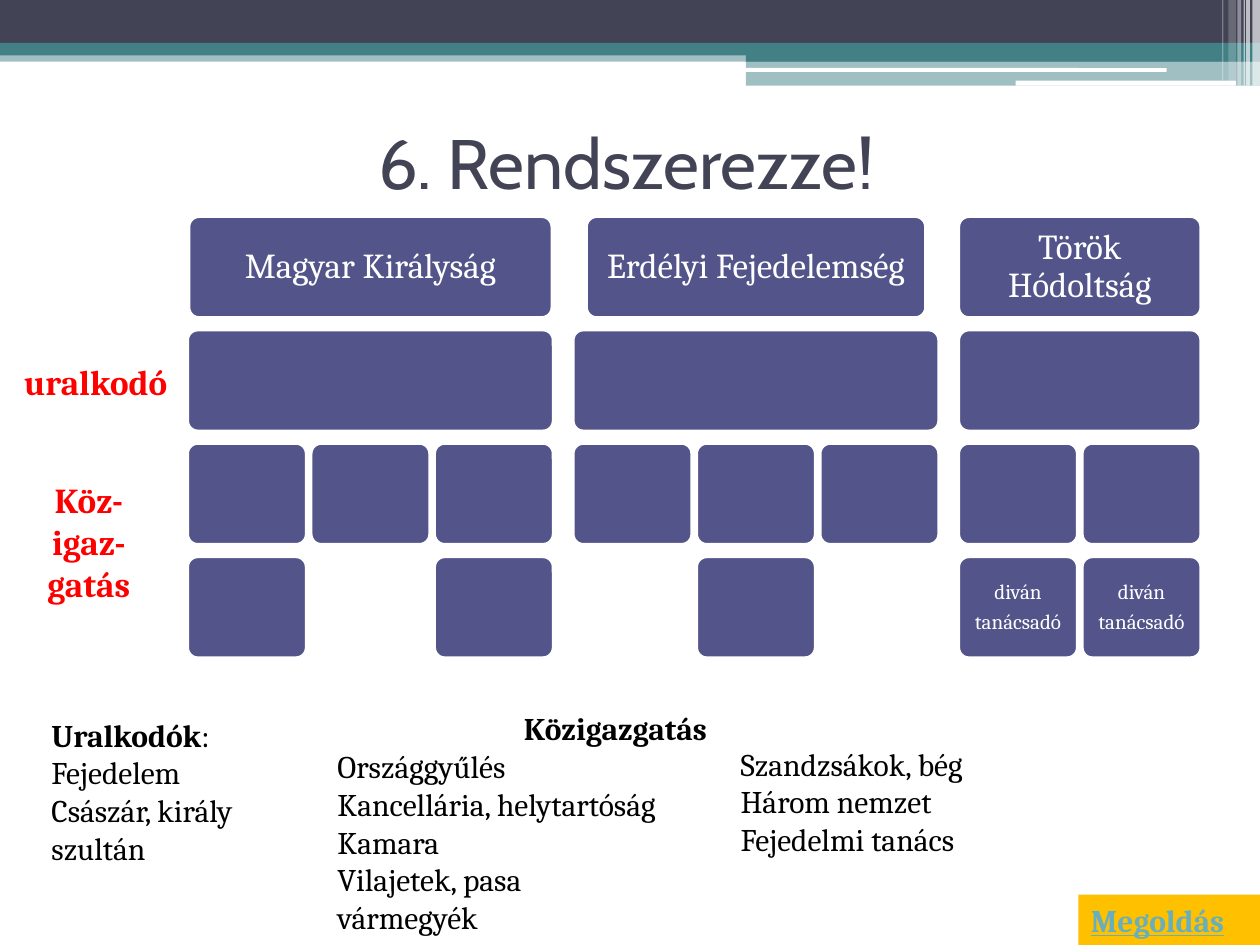
from lxml import etree
from pptx import Presentation
from pptx.dml.color import RGBColor
from pptx.oxml.ns import qn
from pptx.util import Inches, Pt
from pptx.enum import shapes, text

INK = {"navy": "424456", "teal": "438086", "white": "FFFFFF", "box": "53548A",
       "gold": "FFC000", "link": "67AFBD", "red": "FF0000", "black": "000000"}
RECT, ROUND = shapes.MSO_SHAPE.RECTANGLE, shapes.MSO_SHAPE.ROUNDED_RECTANGLE
MID, TOP = text.MSO_ANCHOR.MIDDLE, text.MSO_ANCHOR.TOP
LEFT, MITTE, RIGHT = text.PP_ALIGN.LEFT, text.PP_ALIGN.CENTER, text.PP_ALIGN.RIGHT

deck = Presentation()
deck.slide_width, deck.slide_height = Inches(10), Inches(7.5)
slide = deck.slides.add_slide(deck.slide_layouts[6])


def block(kind, area, ink, alpha=100, edge=None):
    """Add a filled shape, optionally see-through or with an edge."""
    shape = slide.shapes.add_shape(kind, *map(Inches, area))
    shape.shadow.inherit = False
    shape.fill.solid()
    shape.fill.fore_color.rgb = RGBColor.from_string(INK[ink])
    if alpha < 100:
        tone = shape.fill._xPr.find(qn("a:solidFill"))[0]
        etree.SubElement(tone, qn("a:alpha"), val=str(alpha * 1000))
    if edge:
        shape.line.color.rgb = RGBColor.from_string(INK[edge])
        shape.line.width = Pt(1.5)
    else:
        shape.line.fill.background()
    return shape


def write(shape, lines, size, ink, align=LEFT, anchor=TOP, inset=0.1, space=None,
          **font):
    """Fill a shape with one paragraph per line."""
    frame = shape.text_frame
    frame.word_wrap, frame.vertical_anchor = True, anchor
    frame.margin_left = frame.margin_right = Inches(inset)
    frame.margin_top = frame.margin_bottom = Inches(inset / 2)
    look = {"name": "Cambria", "size": Pt(size), **font}
    for i, line in enumerate(lines):
        para = frame.paragraphs[0] if i == 0 else frame.add_paragraph()
        para.alignment = align
        if space:
            para.line_spacing, para.space_after = space, Pt(size * 0.35)
        run = para.add_run()
        run.text = line
        run.font.color.rgb = RGBColor.from_string(INK[ink])
        for key, value in look.items():
            setattr(run.font, key, value)
    return frame


# Header bands
for area, ink, alpha in [
        ((0, 0.4, 10, 0.09), "teal", 50), ((0, 0, 10, 0.34), "navy", 100),
        ((0, 0.34, 10, 0.1), "teal", 100), ((5.92, 0.39, 4.08, 0.1), "teal", 100),
        ((5.92, 0.48, 4.08, 0.2), "teal", 50)]:
    block(RECT, area, ink, alpha)
for area in [(5.91, 0.54, 3.35, 0.03), (8.06, 0.64, 1.75, 0.04)]:
    block(ROUND, area, "white")

# Pale stripes at the right end
for left, wide, tall, alpha in [
        (9.94, 0.06, 0.68, 65), (9.89, 0.03, 0.68, 65), (9.87, 0.01, 0.68, 60),
        (9.82, 0.03, 0.68, 40), (9.75, 0.06, 0.64, 20), (9.7, 0.01, 0.64, 30)]:
    block(RECT, (left, 0, wide, tall), "white", alpha)

# Title
title = slide.shapes.add_textbox(*map(Inches, (0.47, 0.7, 9, 1.17)))
write(title, ["6. Rendszerezze!"], 40, "navy", MITTE, MID, name="Cabin")

# Answer button
button = block(RECT, (8.56, 7.1, 1.44, 0.4), "gold")
write(button, ["Megoldás"], 18, "link", bold=True, underline=True)

# Chart of boxes: three groups of columns, four rows
X, Y, COL, ROW, GAP = 1.49, 1.72, 0.98, 0.9, 0.04
WIDE, TALL, GROUP = COL - GAP, 0.8, 3.06
groups = [  # heading, its width, columns, columns filled in the last row
    ("Magyar Királyság", 2.88, 3, {0: [], 2: []}),
    ("Erdélyi Fejedelemség", 2.69, 3, {1: []}),
    ("Török Hódoltság", 1.92, 2, dict.fromkeys((0, 1), ["diván", "tanácsadó"]))]
for g, (head, width, cols, last) in enumerate(groups):
    left, span = X + g * GROUP, cols * COL - GAP
    cells = [(left + (span - width) / 2, 0, width, [head], 20),
             (left, 1, span, [], 20)]
    cells += [(left + c * COL, 2, WIDE, [], 12) for c in range(cols)]
    cells += [(left + c * COL, 3, WIDE, lines, 12) for c, lines in last.items()]
    for x, row, wide, lines, size in cells:
        cell = block(ROUND, (x, Y + row * ROW, wide, TALL), "box", edge="white")
        cell.adjustments[0] = 0.1
        write(cell, lines, size, "white", MITTE, MID, size / 200, 0.9)

# Row labels
for area, lines in [((0, 2.81, 1.52, 0.44), ["uralkodó"]),
                    ((0.16, 3.75, 1.09, 1.11), ["Köz-", "igaz-", "gatás"])]:
    label = slide.shapes.add_textbox(*map(Inches, area))
    write(label, lines, 20, "red", MITTE, bold=True)

# Word lists
lists = [
    ((0.31, 5.63, 1.95, 1.31),
     ["Uralkodók", "Fejedelem", "Császár, király", "szultán"]),
    ((2.58, 5.58, 3.13, 1.92),
     ["Közigazgatás", "Országgyűlés", "Kancellária, helytartóság", "Kamara",
      "Vilajetek, pasa", "vármegyék"]),
    ((5.78, 5.86, 2.73, 1.01),
     ["Szandzsákok, bég", "Három nemzet", "Fejedelmi tanács"])]
rulers, offices, others = [
    write(slide.shapes.add_textbox(*map(Inches, area)), lines, 18, "black").paragraphs
    for area, lines in lists]
for para in (rulers[0], offices[0]):
    para.runs[0].font.bold = True
offices[0].alignment = RIGHT
colon = rulers[0].add_run()
colon.text = ":"
colon.font.name, colon.font.size = "Cambria", Pt(18)
colon.font.color.rgb = RGBColor.from_string(INK["black"])

deck.save("out.pptx")
